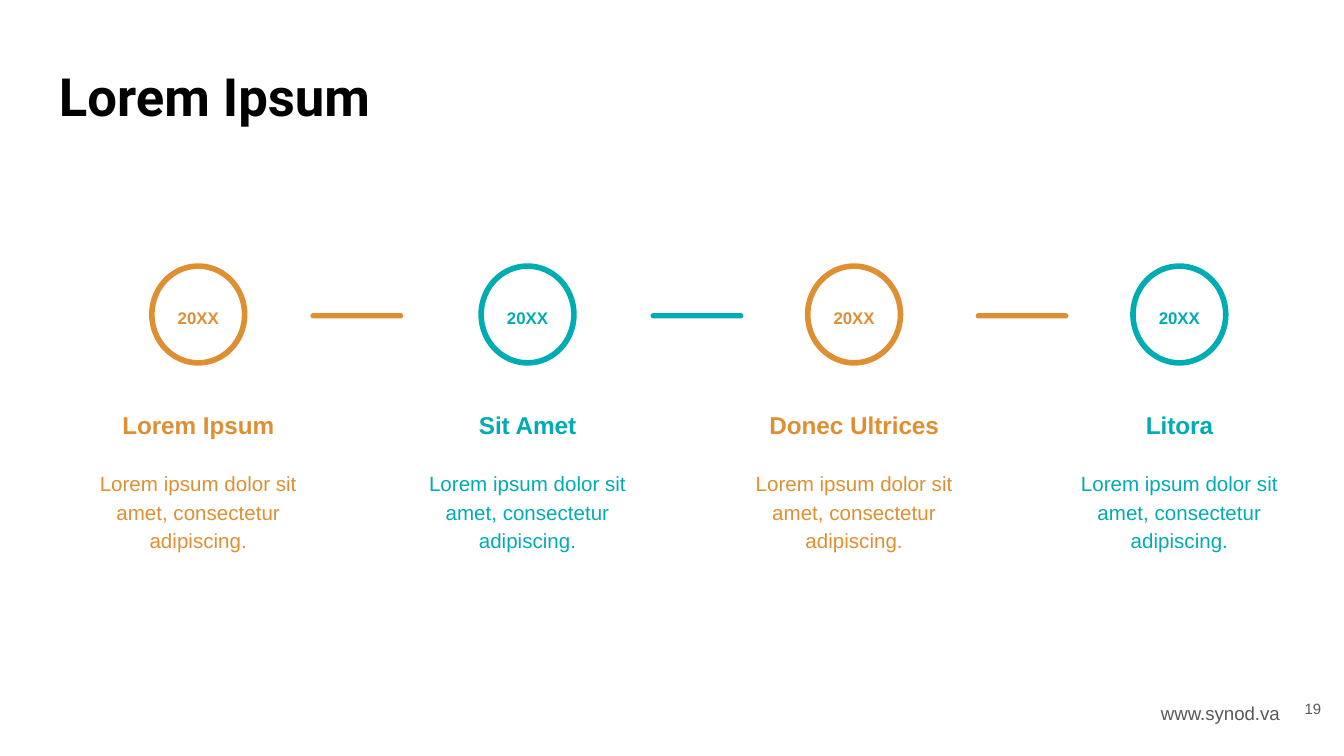
from pptx import Presentation
from pptx.dml.color import RGBColor
from pptx.enum.shapes import MSO_SHAPE
from pptx.enum.text import MSO_ANCHOR, PP_ALIGN
from pptx.util import Inches, Pt

COLORS = {
    "orange": "DE8F32",
    "teal": "00ACB3",
    "black": "000000",
    "gray": "595959",
}
DESCRIPTION = "Lorem ipsum dolor sit amet, consectetur adipiscing."
# Column left, heading, colour
MILESTONES = [
    (0.48, "Lorem Ipsum", "orange"),
    (2.93, "Sit Amet", "teal"),
    (5.36, "Donec Ultrices", "orange"),
    (7.78, "Litora", "teal"),
]
# Dash left, colour
DASHES = [(2.31, "orange"), (4.84, "teal"), (7.26, "orange")]
COLUMN_WIDTH = 1.99


def rgb(color):
    return RGBColor.from_string(COLORS[color])


def add_text(slide, box, text, size, color, font="Arial", bold=False,
             align=PP_ALIGN.LEFT, anchor=MSO_ANCHOR.TOP, spacing=1.0,
             after=0, wrap=True, inset_top=0.1):
    frame = slide.shapes.add_textbox(*map(Inches, box)).text_frame
    frame.word_wrap = wrap
    frame.vertical_anchor = anchor
    frame.margin_left = frame.margin_right = frame.margin_bottom = Inches(0.1)
    frame.margin_top = Inches(inset_top)
    paragraph = frame.paragraphs[0]
    paragraph.alignment = align
    paragraph.line_spacing = spacing
    paragraph.space_after = Pt(after)
    run = paragraph.add_run()
    run.text = text
    run.font.name = font
    run.font.size = Pt(size)
    run.font.bold = bold
    run.font.color.rgb = rgb(color)


def add_title(slide, box):
    add_text(slide, box, "Lorem Ipsum", 28.2, "black", font="Roboto",
             bold=True, anchor=MSO_ANCHOR.MIDDLE, spacing=0.9)


def add_footer(slide, left, top, width, height):
    """Place the web address and, overlapping its right end, the page number."""
    add_text(slide, (left, top, 3.28, height), "www.synod.va", 10, "gray",
             align=PP_ALIGN.RIGHT, anchor=MSO_ANCHOR.MIDDLE)
    add_text(slide, (left + width - 0.6, top, 0.6, height), "19", 8, "gray",
             align=PP_ALIGN.RIGHT, inset_top=0.14)


def add_milestone(slide, left, top, width, heading, color):
    """Stack a ringed year, a heading and a description in one column."""
    center = left + width / 2
    ring = slide.shapes.add_shape(
        MSO_SHAPE.OVAL, Inches(center - 0.345), Inches(top),
        Inches(0.69), Inches(0.72))
    ring.shadow.inherit = False
    ring.fill.background()
    ring.line.color.rgb = rgb(color)
    ring.line.width = Pt(3)

    centered = {"align": PP_ALIGN.CENTER, "spacing": 1.15}
    add_text(slide, (center - 0.255, top + 0.19, 0.51, 0.39), "20XX", 9, color,
             bold=True, after=16, wrap=False, inset_top=0.12, **centered)
    add_text(slide, (left, top + 0.85, width, 0.54), heading, 13, color,
             bold=True, anchor=MSO_ANCHOR.BOTTOM, **centered)
    add_text(slide, (left, top + 1.4, width, 0.89), DESCRIPTION, 11, color,
             after=16, **centered)


def add_dash(slide, left, top, color):
    dash = slide.shapes.add_shape(
        MSO_SHAPE.ROUNDED_RECTANGLE, Inches(left), Inches(top),
        Inches(0.69), Inches(0.04))
    dash.adjustments[0] = 0.5
    dash.shadow.inherit = False
    dash.fill.solid()
    dash.fill.fore_color.rgb = rgb(color)
    dash.line.fill.background()


def add_timeline(slide, top):
    for left, heading, color in MILESTONES:
        add_milestone(slide, left, top, COLUMN_WIDTH, heading, color)
    for left, color in DASHES:
        add_dash(slide, left, top + 0.35, color)


def main():
    presentation = Presentation()
    presentation.slide_width = Inches(10)
    presentation.slide_height = Inches(10 * 9 / 16)
    slide = presentation.slides.add_slide(presentation.slide_layouts[6])
    add_title(slide, (0.34, 0.41, 6.56, 0.66))
    add_timeline(slide, 1.98)
    add_footer(slide, 6.34, 5.12, 3.59, 0.37)
    presentation.save("out.pptx")


if __name__ == "__main__":
    main()
